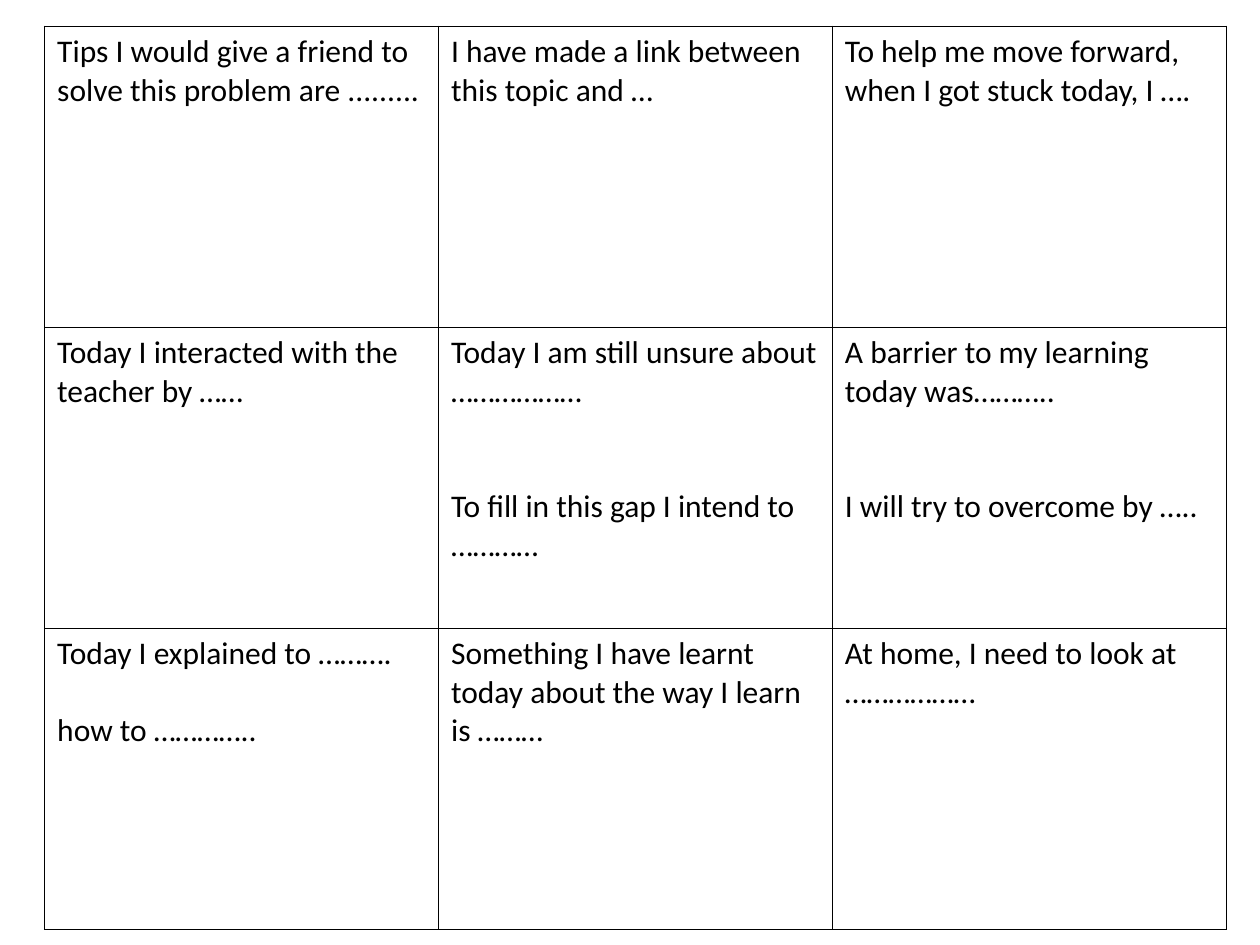
from pptx import Presentation
from pptx.util import Cm, Pt
from pptx.dml.color import RGBColor as RGB
from pptx.oxml.ns import qn
from lxml.etree import SubElement as Sub

PROMPTS = [
    [
        ["Tips I would give a friend to solve this problem are ........."],
        ["I have made a link between this topic and …"],
        ["To help me move forward, when I got stuck today, I …."],
    ],
    [
        ["Today I interacted with the teacher by ……"],
        ["Today I am still unsure about ………………", "To fill in this gap I intend to …………"],
        ["A barrier to my learning today was………..", "I will try to overcome by ….."],
    ],
    [
        ["Today I explained to ……….", "how to ………….."],
        ["Something I have learnt today about the way I learn is ………"],
        ["At home, I need to look at ………………"],
    ],
]
GAPS = [0, 44, 22]
THEME = {"font": "Calibri", "size": 18, "ink": "000000", "rule": 1}
SLIDE = (25.4, 19.05)
LEFT, TOP = 0.9, 0.53
WIDE, HIGH = 7.94, 6.07


def write(par, text, font=THEME["font"], size=THEME["size"], ink=THEME["ink"], gap=0):
    par.space_before = Pt(gap)
    run = par.add_run()
    run.text = text
    run.font.name = font
    run.font.size = Pt(size)
    run.font.color.rgb = RGB.from_string(ink)


def frame(cell):
    props = cell._tc.get_or_add_tcPr()
    for side in "LRTB":
        line = Sub(props, qn(f"a:ln{side}"), w=str(Pt(THEME["rule"])))
        fill = Sub(line, qn("a:solidFill"))
        Sub(fill, qn("a:srgbClr"), val=THEME["ink"])
    cell.fill.background()


def main():
    deck = Presentation()
    deck.slide_width, deck.slide_height = map(Cm, SLIDE)
    slide = deck.slides.add_slide(deck.slide_layouts[6])
    rows, cols = len(PROMPTS), len(PROMPTS[0])
    grid = slide.shapes.add_table(
        rows, cols, Cm(LEFT), Cm(TOP), Cm(WIDE * cols), Cm(HIGH * rows)
    ).table
    grid.first_row = grid.horz_banding = False
    for col in grid.columns:
        col.width = Cm(WIDE)
    for r, (row, gap) in enumerate(zip(PROMPTS, GAPS)):
        grid.rows[r].height = Cm(HIGH)
        for c, lines in enumerate(row):
            cell = grid.cell(r, c)
            frame(cell)
            body = cell.text_frame
            for n, text in enumerate(lines):
                par = body.add_paragraph() if n else body.paragraphs[0]
                write(par, text, gap=gap if n else 0)
    deck.save("out.pptx")


if __name__ == "__main__":
    main()
